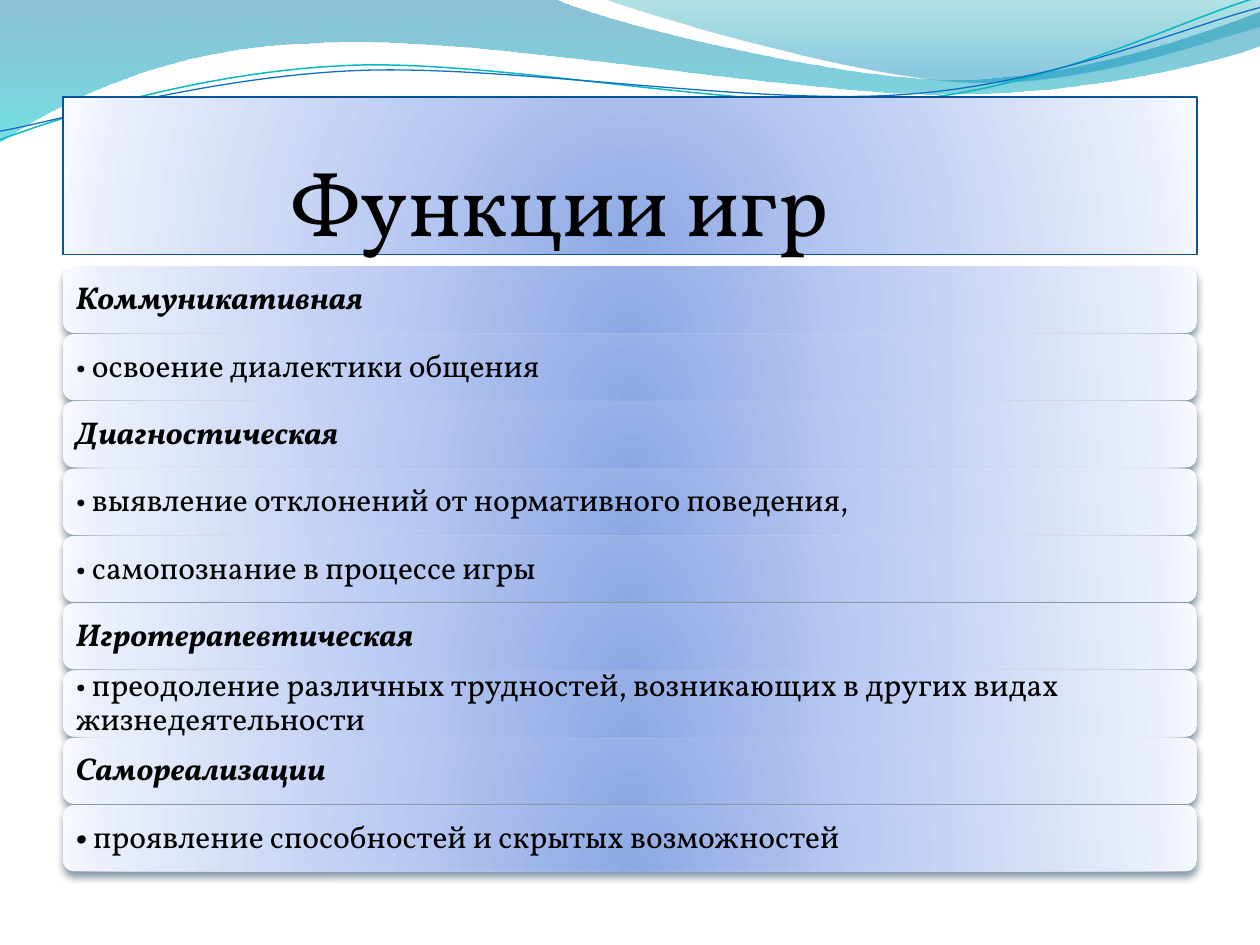
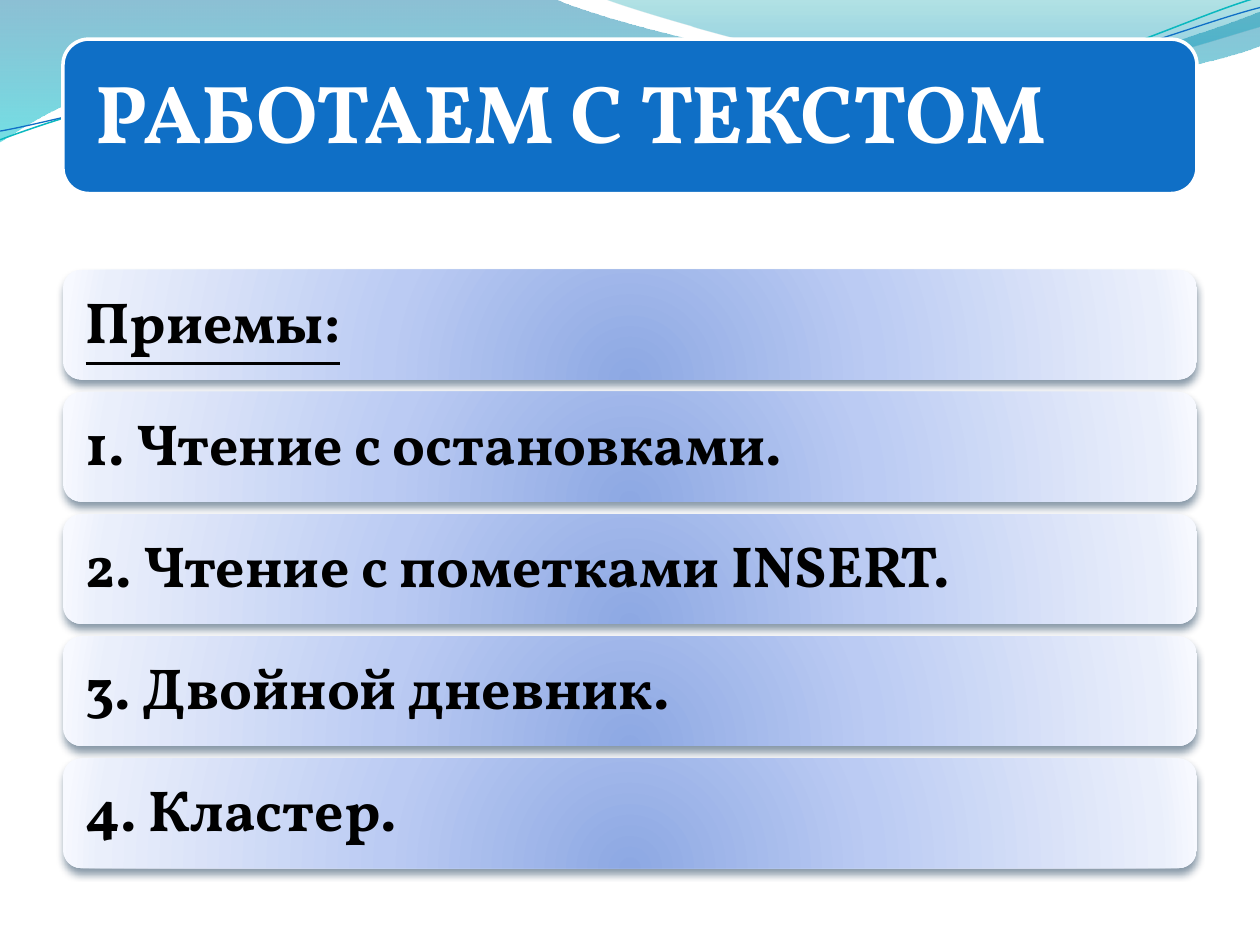
from lxml.etree import SubElement
from pptx import Presentation
from pptx.dml.color import RGBColor
from pptx.enum.shapes import MSO_SHAPE
from pptx.enum.text import MSO_ANCHOR, MSO_AUTO_SIZE, PP_ALIGN
from pptx.oxml.ns import qn
from pptx.util import Pt

FONT = "Vollkorn"
BLACK, WHITE, BLUE, TEAL = "000000", "FFFFFF", "0F6FC6", "0AB8BF"
TITLE_EDGE, SHADOW = "095295", "042747"
GLOW = [(0, "8DA8E3", 100), (43, "BBCBF3", 100), (93, "EAEFFB", 100), (100, "F7F9FF", 100)]
GLOW_CENTRE = {"l": 50, "t": 130, "r": 50, "b": -30}
LEFT, WIDTH = 36, 648

WAVES = [
    ((0, 0),
     [(316.8, -0.7), (342.7, 12.2, 478.1, 45.4, 545.8, 45.4),
      (614.2, 45.4, 689.8, 18.7, 720, 6.5), (720.7, 25.9),
      (707.8, 31.7, 626.4, 54.7, 537.1, 54), (447.8, 54, 275, 20.2, 185, 24.5),
      (92.9, 25.9, 33.1, 59.8, -0.7, 81.4), (0, 0)],
     [(0, "0074A1", 45), (100, "00C6CF", 55)]),
    ((344.9, -0.7),
     [(366.5, 7.9, 491, 44.6, 553.7, 46.8), (616.3, 49.7, 691.9, 23, 720, 15.1),
      (720, 0), (344.9, -0.7)],
     [(0, "00A1A9", 30), (80, "008BBF", 45)]),
]
STRANDS = [
    ((0, 79.9),
     [(34.6, 67, 113.8, 41, 199.4, 37.4), (284.4, 33.8, 427, 64.1, 513.4, 57.6),
      (599.8, 51.1, 675.4, 10.8, 718.6, -1.4)], TEAL, 0.85),
    ((0, 74.9),
     [(33.8, 69.1, 118.1, 43.9, 203.8, 40.3), (290.2, 36.7, 429.8, 60.5, 516.2, 54),
      (601.9, 48.2, 677.5, 15.1, 720, 4.3)], BLUE, 0.75),
]

HEADING = {"bold": True, "italic": True}
PLAIN = {}
FUNCTIONS = [
    [("Коммуникативная", HEADING)],
    [("• освоение диалектики общения", PLAIN)],
    [("Диагностическая", HEADING)],
    [("• выявление отклонений от нормативного поведения,", PLAIN)],
    [("• самопознание в процессе игры", PLAIN)],
    [("Игротерапевтическая", HEADING)],
    [("• преодоление различных трудностей, возникающих в других видах жизнедеятельности", PLAIN)],
    [("Самореализации", HEADING)],
    [("• ", HEADING), ("проявление способностей и скрытых возможностей", PLAIN)],
]
STRONG = {"bold": True}
TECHNIQUES = [
    [("Приемы:", {"bold": True, "underline": True})],
    [("1. Чтение с остановками.", STRONG)],
    [("2. Чтение с пометками INSERT", STRONG), (".", STRONG)],
    [("3. Двойной дневник.", STRONG)],
    [("4. Кластер.", STRONG)],
]


def rgb(code):
    return RGBColor.from_string(code)


def apply_format(target, values):
    for name, value in values.items():
        setattr(target, name, value)


def place(shape, left, top, width, height):
    apply_format(shape, {"left": Pt(left), "top": Pt(top),
                         "width": Pt(width), "height": Pt(height)})


def set_line(shape, color=None, width=0.75):
    if color is None:
        shape.line.fill.background()
        return
    shape.line.color.rgb = rgb(color)
    shape.line.width = Pt(width)


def add_color(parent, color, opacity):
    tint = SubElement(parent, qn("a:srgbClr"), val=color)
    if opacity < 100:
        SubElement(tint, qn("a:alpha"), val=str(opacity * 1000))


def set_gradient(shape, stops, centre=None):
    shape.fill.gradient()
    gradient = shape.element.spPr.find(qn("a:gradFill"))
    for child in list(gradient):
        gradient.remove(child)
    stop_list = SubElement(gradient, qn("a:gsLst"))
    for position, color, opacity in stops:
        stop = SubElement(stop_list, qn("a:gs"), pos=str(position * 1000))
        add_color(stop, color, opacity)
    if centre:
        circle = SubElement(gradient, qn("a:path"), path="circle")
        SubElement(circle, qn("a:fillToRect"),
                   {side: str(share * 1000) for side, share in centre.items()})
    else:
        SubElement(gradient, qn("a:lin"), ang="5400000", scaled="0")


def set_shadow(shape):
    effects = shape.element.spPr.find(qn("a:effectLst"))
    shadow = SubElement(effects, qn("a:outerShdw"), blurRad=str(Pt(4.5)), dist=str(Pt(3)),
                        dir="5400000", algn="ctr", rotWithShape="0")
    add_color(shadow, SHADOW, 48)


def set_glow(shape, edge=None):
    set_gradient(shape, GLOW, GLOW_CENTRE)
    set_line(shape, edge)


def write(shape, runs, size, color, insets, anchor=MSO_ANCHOR.MIDDLE, spacing=0.9):
    frame = shape.text_frame
    sides = ("margin_left", "margin_top", "margin_right", "margin_bottom")
    apply_format(frame, {"word_wrap": True, "auto_size": MSO_AUTO_SIZE.NONE,
                         "vertical_anchor": anchor})
    apply_format(frame, {side: Pt(inset) for side, inset in zip(sides, insets)})
    paragraph = frame.paragraphs[0]
    apply_format(paragraph, {"alignment": PP_ALIGN.LEFT, "line_spacing": spacing})
    for text, style in runs:
        run = paragraph.add_run()
        run.text = text
        apply_format(run.font, {"name": FONT, "size": Pt(size), **style})
        run.font.color.rgb = rgb(color)


def bend(outline, segments):
    lines = iter(list(outline.element.iter(qn("a:lnTo"))))
    for segment in segments:
        first = next(lines)
        if len(segment) == 2:
            continue
        first.tag = qn("a:cubicBezTo")
        for _ in range(2):
            line = next(lines)
            first.append(line[0])
            line.getparent().remove(line)


def add_outline(slide, start, segments):
    points = [(Pt(x), Pt(y)) for segment in segments
              for x, y in zip(segment[::2], segment[1::2])]
    builder = slide.shapes.build_freeform(Pt(start[0]), Pt(start[1]))
    builder.add_line_segments(points, close=segments[-1] == start)
    outline = builder.convert_to_shape()
    outline.shadow.inherit = False
    bend(outline, segments)
    return outline


def add_waves_to_master(deck, slide):
    outlines = []
    for start, segments, stops in WAVES:
        wave = add_outline(slide, start, segments)
        set_gradient(wave, stops)
        set_line(wave)
        outlines.append(wave)
    for start, segments, color, width in STRANDS:
        strand = add_outline(slide, start, segments)
        strand.fill.background()
        set_line(strand, color, width)
        outlines.append(strand)
    master_tree = deck.slide_master.shapes.element
    for order, outline in enumerate(outlines):
        outline.element.nvSpPr.cNvPr.set("id", str(100 + order))
        master_tree.insert(2 + order, outline.element)


def add_band(slide, top, height):
    band = slide.shapes.add_shape(MSO_SHAPE.ROUNDED_RECTANGLE, Pt(LEFT), Pt(top),
                                  Pt(WIDTH), Pt(height))
    band.shadow.inherit = False
    return band


def add_band_list(slide, rows, top, height, pitch, size, inset):
    for index, runs in enumerate(rows):
        band = add_band(slide, top + index * pitch, height)
        set_glow(band)
        set_shadow(band)
        write(band, runs, size, BLACK, [inset] * 4)


def build_functions(slide):
    title = slide.shapes.title
    place(title, LEFT, 55.4, WIDTH, 90)
    set_glow(title, TITLE_EDGE)
    write(title, [("Функции игр", PLAIN)], 50, BLACK, (130, 3.6, 0, 0), MSO_ANCHOR.BOTTOM, 1.0)
    add_band_list(slide, FUNCTIONS, top=152.4, height=37.8, pitch=38.45, size=18, inset=5.4)


def build_techniques(slide):
    header = add_band(slide, 22.4, 88.2)
    header.fill.solid()
    header.fill.fore_color.rgb = rgb(BLUE)
    set_line(header, WHITE, 2)
    title = slide.shapes.title
    title.element.addprevious(header.element)
    place(title, 40.3, 26.7, 639.4, 79.6)
    write(title, [("РАБОТАЕМ С ТЕКСТОМ", STRONG)], 47, WHITE, [14.4] * 4)
    add_band_list(slide, TECHNIQUES, top=154.2, height=62.7, pitch=69.8, size=33, inset=9.9)


def main():
    deck = Presentation()
    apply_format(deck, {"slide_width": Pt(720), "slide_height": Pt(540)})
    title_only = deck.slide_layouts[5]
    functions, techniques = [deck.slides.add_slide(title_only) for _ in range(2)]
    add_waves_to_master(deck, functions)
    build_functions(functions)
    build_techniques(techniques)
    deck.save("out.pptx")


if __name__ == "__main__":
    main()
